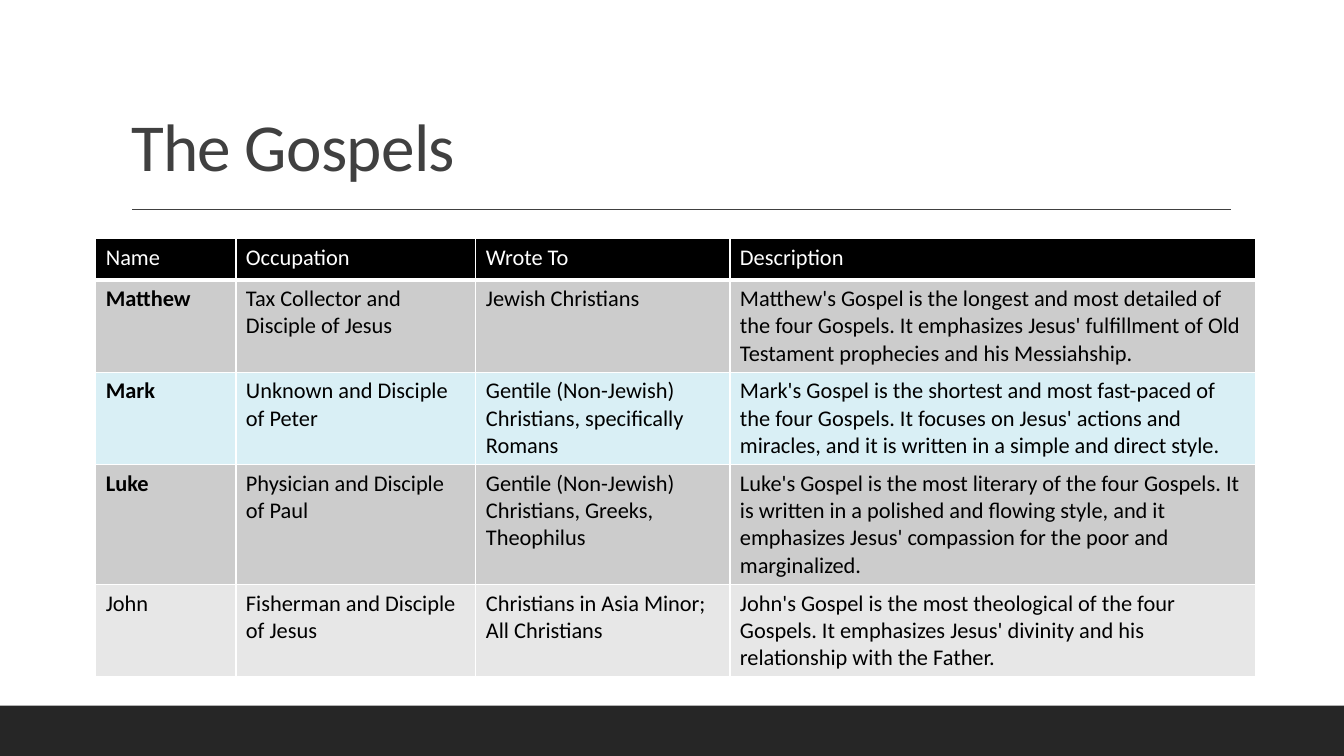
from dataclasses import dataclass

from lxml import etree
from pptx import Presentation
from pptx.dml.color import RGBColor
from pptx.enum import shapes, text
from pptx.oxml import ns
from pptx.util import Inches, Pt


@dataclass(frozen=True)
class Theme:
    font: str = "Calibri"
    title_size: float = 48
    body_size: float = 16
    ink: str = "000000"
    white: str = "FFFFFF"
    title: str = "404040"
    footer: str = "262626"
    band_dark: str = "CCCCCC"
    band_blue: str = "D9EFF5"
    band_light: str = "E7E7E7"


@dataclass(frozen=True)
class GospelRow:
    cells: tuple[str, str, str, str]
    height: float
    fill: str
    color: str = Theme.ink
    bold_name: bool = False
    top_border: float = 1
    bottom_border: float = 1


THEME = Theme()
COLUMN_WIDTHS = (1.39, 2.38, 2.52, 5.21)
ROWS = (
    GospelRow(("Name", "Occupation", "Wrote To", "Description"),
              0.41, THEME.ink, THEME.white, bottom_border=3),
    GospelRow(("Matthew", "Tax Collector and Disciple of Jesus", "Jewish Christians",
               "Matthew's Gospel is the longest and most detailed of the four Gospels. "
               "It emphasizes Jesus' fulfillment of Old Testament prophecies and his "
               "Messiahship."),
              0.91, THEME.band_dark, bold_name=True, top_border=3),
    GospelRow(("Mark", "Unknown and Disciple of Peter",
               "Gentile (Non-Jewish) Christians, specifically Romans",
               "Mark's Gospel is the shortest and most fast-paced of the four Gospels. "
               "It focuses on Jesus' actions and miracles, and it is written in a simple "
               "and direct style."),
              0.91, THEME.band_blue, bold_name=True),
    GospelRow(("Luke", "Physician and Disciple of Paul",
               "Gentile (Non-Jewish) Christians, Greeks, Theophilus",
               "Luke's Gospel is the most literary of the four Gospels. It is written in "
               "a polished and flowing style, and it emphasizes Jesus' compassion for the "
               "poor and marginalized."),
              1.19, THEME.band_dark, bold_name=True),
    GospelRow(("John", "Fisherman and Disciple of Jesus",
               "Christians in Asia Minor; All Christians",
               "John's Gospel is the most theological of the four Gospels. It emphasizes "
               "Jesus' divinity and his relationship with the Father."),
              0.91, THEME.band_light),
)


def rgb(color: str) -> RGBColor:
    return RGBColor.from_string(color)


def add_run(paragraph, words: str, size: float, color: str, bold: bool = False):
    run = paragraph.add_run()
    run.text = words
    run.font.name = THEME.font
    run.font.size = Pt(size)
    run.font.bold = bold
    run.font.color.rgb = rgb(color)
    return run


def add_border(cell, side: str, width: float) -> None:
    properties = cell._tc.get_or_add_tcPr()
    line = etree.SubElement(properties, ns.qn(f"a:ln{side}"), w=str(Pt(width)))
    fill = etree.SubElement(line, ns.qn("a:solidFill"))
    etree.SubElement(fill, ns.qn("a:srgbClr"), val=THEME.white)


def add_footer_and_rule(slide) -> None:
    footer = slide.shapes.add_shape(shapes.MSO_SHAPE.RECTANGLE, Inches(0), Inches(7),
                                    Inches(13.33), Inches(0.5))
    footer.shadow.inherit = False
    footer.fill.solid()
    footer.fill.fore_color.rgb = rgb(THEME.footer)
    footer.line.fill.background()

    rule = slide.shapes.add_connector(shapes.MSO_CONNECTOR.STRAIGHT, Inches(1.31),
                                      Inches(2.08), Inches(12.21), Inches(2.08))
    rule.line.color.rgb = rgb(THEME.title)
    rule.line.width = Pt(1)
    etree.SubElement(rule._element.spPr, ns.qn("a:effectLst"))


def add_title(slide, words: str) -> None:
    title = slide.shapes.title
    title.left, title.top = Inches(1.2), Inches(0.31)
    title.width, title.height = Inches(11), Inches(1.59)
    frame = title.text_frame
    frame.word_wrap = True
    frame.auto_size = text.MSO_AUTO_SIZE.NONE
    frame.vertical_anchor = text.MSO_ANCHOR.BOTTOM
    paragraph = frame.paragraphs[0]
    paragraph.alignment = text.PP_ALIGN.LEFT
    paragraph.line_spacing = 0.9
    run = add_run(paragraph, words, THEME.title_size, THEME.title)
    run.font._element.set("spc", "-50")


def add_gospel_table(slide) -> None:
    table = slide.shapes.add_table(
        len(ROWS), len(COLUMN_WIDTHS), Inches(0.95), Inches(2.37),
        Inches(sum(COLUMN_WIDTHS)), Inches(sum(row.height for row in ROWS))).table
    for column, width in zip(table.columns, COLUMN_WIDTHS):
        column.width = Inches(width)
    for row, content in zip(table.rows, ROWS):
        row.height = Inches(content.height)
        borders = {"L": 1, "R": 1, "T": content.top_border, "B": content.bottom_border}
        for index, (cell, words) in enumerate(zip(row.cells, content.cells)):
            # Borders come before the fill in the cell properties
            for side, width in borders.items():
                add_border(cell, side, width)
            cell.fill.solid()
            cell.fill.fore_color.rgb = rgb(content.fill)
            add_run(cell.text_frame.paragraphs[0], words, THEME.body_size,
                    content.color, content.bold_name and index == 0)


def main() -> None:
    presentation = Presentation()
    presentation.slide_width = Inches(13.33)
    presentation.slide_height = Inches(7.5)
    title_only = presentation.slide_layouts[5]
    slide = presentation.slides.add_slide(title_only)
    add_footer_and_rule(slide)
    add_title(slide, "The Gospels")
    add_gospel_table(slide)
    presentation.save("out.pptx")


if __name__ == "__main__":
    main()
